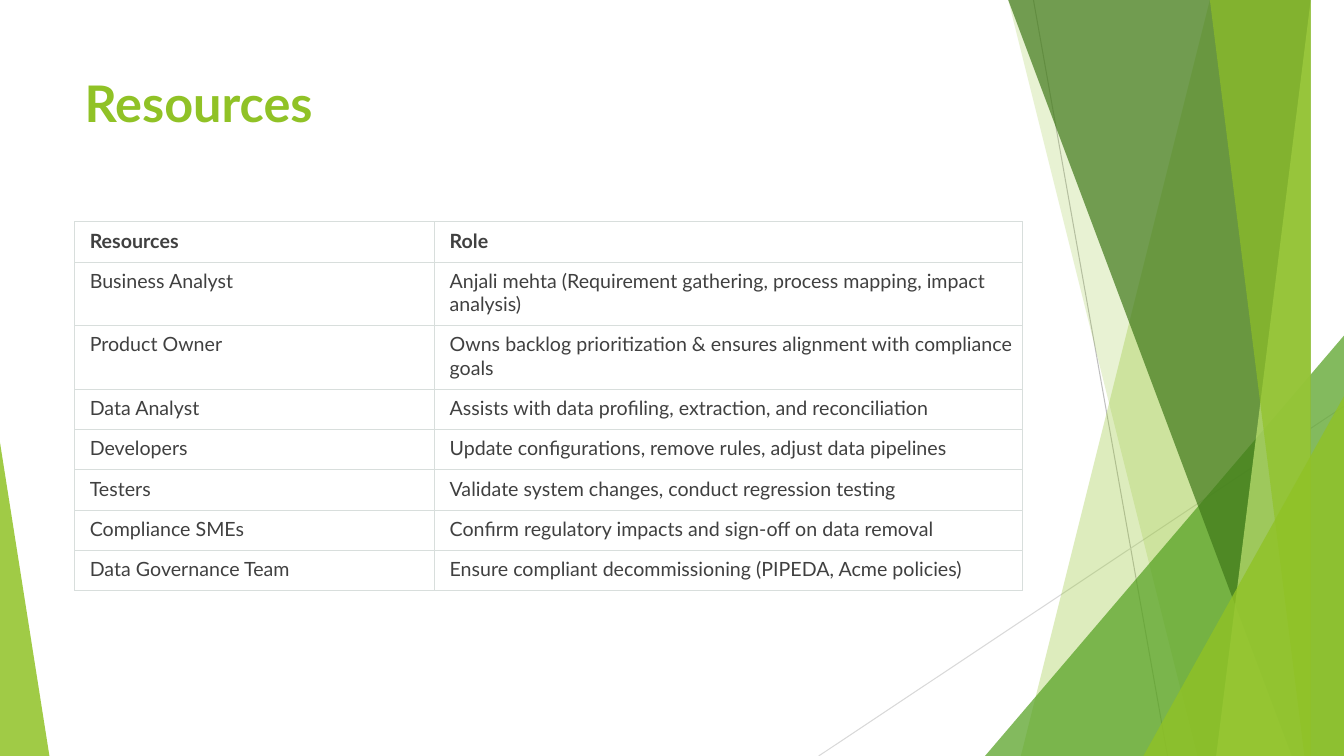
from dataclasses import dataclass

from lxml import etree
from pptx import Presentation
from pptx.dml.color import RGBColor
from pptx.enum import shapes, text
from pptx.oxml import ns
from pptx.util import Inches, Pt

WIDTH, HEIGHT = 13.33, 7.5
FACET_TOP = -0.01
FONT = "Lato"

LIME = RGBColor(0x90, 0xC2, 0x26)
PALE_LIME = RGBColor(0xC0, 0xE4, 0x74)
GREEN = RGBColor(0x54, 0xA0, 0x21)
DARK_GREEN = RGBColor(0x3F, 0x78, 0x19)
MID_GRAY = RGBColor(0xBF, 0xBF, 0xBF)
LIGHT_GRAY = RGBColor(0xD9, 0xD9, 0xD9)
BORDER_GRAY = RGBColor(0xD8, 0xDE, 0xDC)
TEXT_GRAY = RGBColor(0x40, 0x40, 0x40)


@dataclass
class Ray:
    start: tuple[float, float]
    end: tuple[float, float]
    color: RGBColor


@dataclass
class Facet:
    """Full-height band from a slanted left edge to the right slide edge."""
    top_x: float
    bottom_x: float
    color: RGBColor
    opacity: int


@dataclass
class Corner:
    """Triangle on the bottom slide edge; apex 0 is left, 1 is right."""
    left: float
    top: float
    width: float
    apex: float
    color: RGBColor
    opacity: int


RAYS = [
    Ray((10.25, 0), (11.58, HEIGHT), MID_GRAY),
    Ray((WIDTH, 4.03), (8.12, HEIGHT), LIGHT_GRAY),
]
PANES = [
    Facet(12.28, 10.04, LIME, 30),
    Facet(10.5, 11.83, LIME, 20),
    Corner(9.77, 3.33, 3.56, 1, GREEN, 72),
    Facet(10.21, 12.91, DARK_GREEN, 70),
    Facet(13.03, 11.92, PALE_LIME, 70),
    Facet(11.96, 13.18, LIME, 65),
    Corner(11.34, 3.93, 1.99, 1, LIME, 80),
    Corner(0, 4.39, 0.49, 0, LIME, 85),
]

COLUMN_WIDTHS = [3.57, 5.83]
ROW_HEIGHT, TALL_ROW_HEIGHT = 0.4, 0.63
TALL_ROWS = {1, 2}
ROLES = [
    ("Resources", "Role"),
    ("Business Analyst", "Anjali mehta (Requirement gathering, process mapping, impact analysis)"),
    ("Product Owner", "Owns backlog prioritization & ensures alignment with compliance goals"),
    ("Data Analyst", "Assists with data profiling, extraction, and reconciliation"),
    ("Developers", "Update configurations, remove rules, adjust data pipelines"),
    ("Testers", "Validate system changes, conduct regression testing"),
    ("Compliance SMEs", "Confirm regulatory impacts and sign-off on data removal"),
    ("Data Governance Team", "Ensure compliant decommissioning (PIPEDA, Acme policies)"),
]
CELL_FORMAT = {
    "margin_left": Inches(0.15),
    "margin_top": Inches(0.07),
    "margin_right": Inches(0.01),
    "margin_bottom": Inches(0.07),
}


def set_attributes(target, values: dict) -> None:
    for name, value in values.items():
        setattr(target, name, value)


def write(p, words: str, size: int, color: RGBColor, bold: bool) -> None:
    r = p.add_run()
    r.text = words
    set_attributes(r.font, {"name": FONT, "size": Pt(size), "bold": bold})
    r.font.color.rgb = color


def draw_ray(s, ray: Ray) -> None:
    points = [Inches(v) for v in ray.start + ray.end]
    line = s.shapes.add_connector(shapes.MSO_CONNECTOR.STRAIGHT, *points)
    line.line.color.rgb = ray.color
    line.line.width = Pt(0.75)
    etree.SubElement(line._element.spPr, ns.qn("a:effectLst"))


def add_facet(s, facet: Facet):
    builder = s.shapes.build_freeform(facet.top_x, FACET_TOP, scale=Inches(1))
    builder.add_line_segments(
        [(WIDTH, FACET_TOP), (WIDTH, HEIGHT), (facet.bottom_x, HEIGHT)])
    return builder.convert_to_shape()


def add_corner(s, corner: Corner):
    box = (corner.left, corner.top, corner.width, HEIGHT - corner.top)
    sp = s.shapes.add_shape(
        shapes.MSO_SHAPE.ISOSCELES_TRIANGLE, *[Inches(v) for v in box])
    sp.adjustments[0] = corner.apex
    return sp


def draw_pane(s, pane: Facet | Corner) -> None:
    sp = add_facet(s, pane) if isinstance(pane, Facet) else add_corner(s, pane)
    sp.shadow.inherit = False
    sp.line.fill.background()
    sp.fill.solid()
    sp.fill.fore_color.rgb = pane.color
    color = sp._element.spPr.find(f"{ns.qn('a:solidFill')}/{ns.qn('a:srgbClr')}")
    etree.SubElement(color, ns.qn("a:alpha"), val=str(pane.opacity * 1000))


def draw_title(s) -> None:
    box = s.shapes.add_textbox(Inches(0.74), Inches(0.67), Inches(9.4), Inches(1.44))
    tf = box.text_frame
    set_attributes(tf, {"word_wrap": True, "vertical_anchor": text.MSO_ANCHOR.TOP})
    write(tf.paragraphs[0], "Resources", 36, LIME, True)


def add_borders(cell) -> None:
    tc_pr = cell._tc.get_or_add_tcPr()
    for side in ("lnL", "lnR", "lnT", "lnB"):
        ln = etree.SubElement(tc_pr, ns.qn(f"a:{side}"), w=str(Pt(0.75)))
        fill = etree.SubElement(ln, ns.qn("a:solidFill"))
        etree.SubElement(fill, ns.qn("a:srgbClr"), val=str(BORDER_GRAY))


def draw_roles(s) -> None:
    heights = [TALL_ROW_HEIGHT if i in TALL_ROWS else ROW_HEIGHT
               for i in range(len(ROLES))]
    table = s.shapes.add_table(
        len(ROLES), len(COLUMN_WIDTHS), Inches(0.74), Inches(2.2),
        Inches(sum(COLUMN_WIDTHS)), Inches(sum(heights))).table
    set_attributes(table, {"first_row": False, "horz_banding": False})
    for column, width in zip(table.columns, COLUMN_WIDTHS):
        column.width = Inches(width)
    for i, (row, height, entries) in enumerate(zip(table.rows, heights, ROLES)):
        row.height = Inches(height)
        for cell, words in zip(row.cells, entries):
            set_attributes(cell, CELL_FORMAT)
            add_borders(cell)
            cell.fill.background()
            write(cell.text_frame.paragraphs[0], words, 14, TEXT_GRAY, i == 0)


def main() -> None:
    prs = Presentation()
    set_attributes(prs, {"slide_width": Inches(WIDTH), "slide_height": Inches(HEIGHT)})
    s = prs.slides.add_slide(prs.slide_layouts[6])
    for ray in RAYS:
        draw_ray(s, ray)
    for pane in PANES:
        draw_pane(s, pane)
    draw_title(s)
    draw_roles(s)
    prs.save("out.pptx")


if __name__ == "__main__":
    main()
